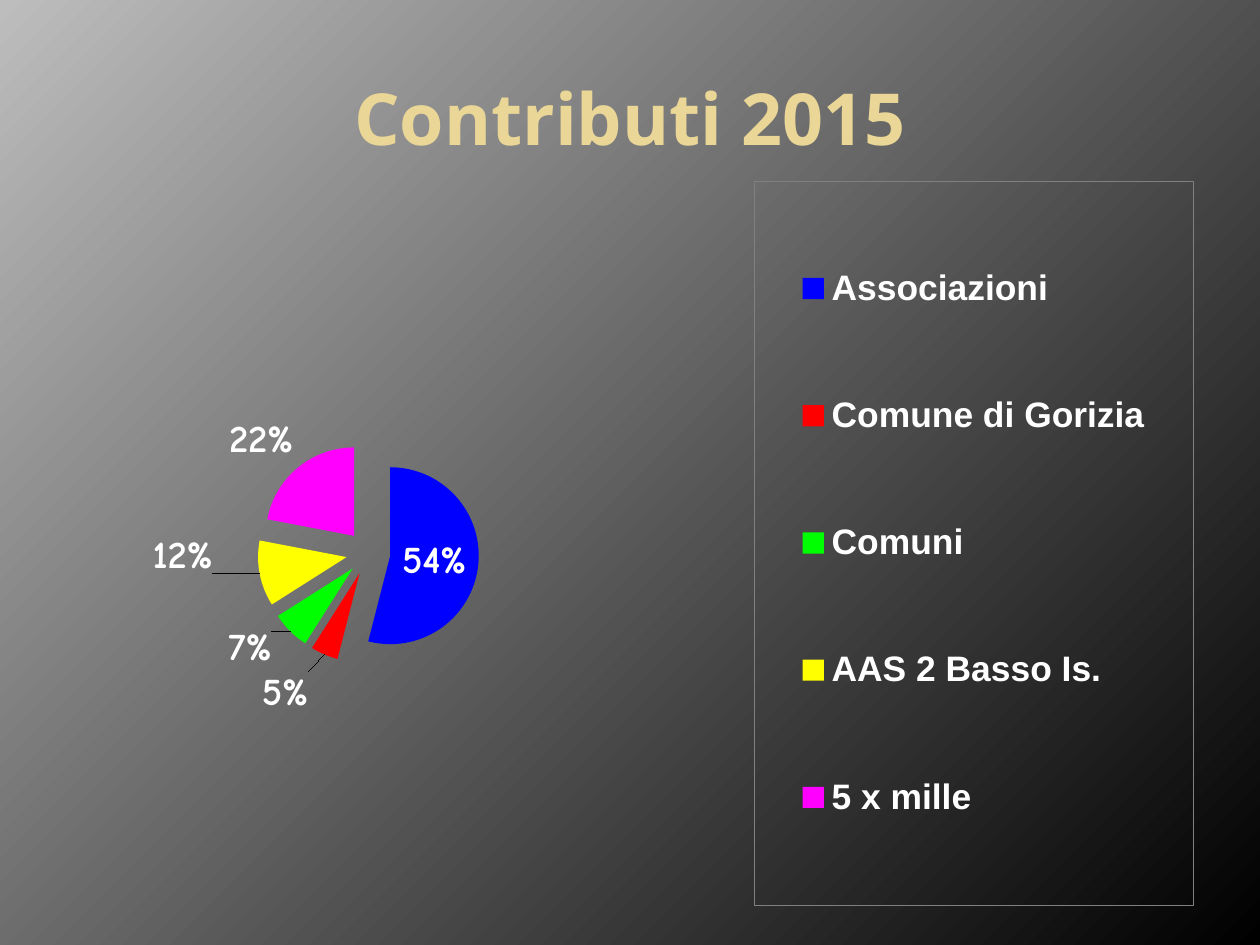
from typing import NamedTuple

from lxml.etree import SubElement
from pptx import Presentation
from pptx.chart.data import CategoryChartData
from pptx.dml.color import RGBColor
from pptx.enum.chart import XL_CHART_TYPE, XL_LABEL_POSITION, XL_LEGEND_POSITION
from pptx.enum.text import MSO_ANCHOR, PP_ALIGN
from pptx.oxml import parse_xml
from pptx.oxml.ns import nsdecls, qn
from pptx.util import Pt

HUES = {
    "light": "BDBDBD", "dark": "000000", "gold": "EAD696", "white": "FFFFFF",
    "blue": "0000FF", "red": "FF0000", "green": "00FF00",
    "yellow": "FFFF00", "pink": "FF00FF", "frame": "808080",
}


class Slice(NamedTuple):
    name: str
    value: int
    hue: str
    spot: XL_LABEL_POSITION
    shift: tuple[float, float] | None = None


OUT = XL_LABEL_POSITION.OUTSIDE_END
SLICES = [
    Slice("Associazioni", 54, "blue", XL_LABEL_POSITION.CENTER),
    Slice("Comune di Gorizia", 5, "red", OUT, (-0.01, 0.01)),
    Slice("Comuni", 7, "green", OUT, (-0.01, -0.01)),
    Slice("AAS 2 Basso Is.", 12, "yellow", OUT, (-0.03, -0.04)),
    Slice("5 x mille", 22, "pink", OUT),
]


def tint(name: str) -> RGBColor:
    return RGBColor.from_string(HUES[name])


def style(font, name: str, size: float, hue: str) -> None:
    font.name, font.size, font.bold = name, Pt(size), True
    font.color.rgb = tint(hue)


def layout(**parts):
    body = "".join(f'<c:{key} val="{val}"/>' for key, val in parts.items())
    return parse_xml(f'<c:layout {nsdecls("c")}><c:manualLayout>{body}'
                     '</c:manualLayout></c:layout>')


def frame(x: float, y: float, w: float, h: float, **mode):
    return layout(**mode, xMode="edge", yMode="edge", x=x, y=y, w=w, h=h)


def paint(slide) -> None:
    fill = slide.background.fill
    fill.gradient()
    fill.gradient_angle = 315
    for stop, name, place in zip(fill.gradient_stops, ("light", "dark"), (0, 1)):
        stop.color.rgb = tint(name)
        stop.position = place


def add_title(slide, text: str) -> None:
    box = slide.shapes.add_textbox(Pt(36), Pt(21.6), Pt(648), Pt(90)).text_frame
    box.word_wrap = True
    box.vertical_anchor = MSO_ANCHOR.MIDDLE
    para = box.paragraphs[0]
    para.text = text
    para.alignment = PP_ALIGN.CENTER
    style(para.font, "Noto Sans", 41, "gold")


def add_legend(chart) -> None:
    chart.has_legend = True
    legend = chart.legend
    legend.position = XL_LEGEND_POSITION.RIGHT
    legend.include_in_layout = False
    style(legend.font, "Arial", 20.2, "white")
    node = chart.element.find(f".//{qn('c:legend')}")
    for old in node.findall(qn("c:layout")):
        node.remove(old)
    node.find(qn("c:legendPos")).addnext(frame(0.6, 0.18, 0.33, 0.72))
    edge = parse_xml(
        f'<c:spPr {nsdecls("c", "a")}><a:noFill/><a:ln w="{Pt(0.5)}"><a:solidFill>'
        f'<a:srgbClr val="{HUES["frame"]}"/></a:solidFill></a:ln></c:spPr>')
    node.find(qn("c:txPr")).addprevious(edge)


def add_labels(chart) -> None:
    plot = chart.plots[0]
    points = plot.series[0].points
    for index, item in enumerate(SLICES):
        fill = points[index].format.fill
        fill.solid()
        fill.fore_color.rgb = tint(item.hue)
        points[index].format.line.fill.background()
        label = points[index].data_label
        style(label.font, "Comic Neue", 22, "white")
        label.position = item.spot
    for node, item in zip(chart.element.iter(qn("c:dLbl")), SLICES):
        node.find(qn("c:showVal")).set("val", "0")
        node.find(qn("c:showPercent")).set("val", "1")
        mark = node.find(qn("c:idx"))
        form = parse_xml(f'<c:numFmt {nsdecls("c")} formatCode="0%" sourceLinked="0"/>')
        mark.addnext(form)
        if item.shift:
            mark.addnext(layout(x=item.shift[0], y=item.shift[1]))
    group = chart.element.find(f".//{qn('c:ser')}/{qn('c:dLbls')}")
    lead = group.find(qn("c:showLeaderLines"))
    if lead is None:
        lead = SubElement(group, qn("c:showLeaderLines"))
    lead.set("val", "1")


def add_pie(slide) -> None:
    data = CategoryChartData()
    data.categories = [item.name for item in SLICES]
    data.add_series("Series 1", [item.value for item in SLICES])
    chart = slide.shapes.add_chart(
        XL_CHART_TYPE.PIE, Pt(-25.2), Pt(0), Pt(760.3), Pt(574.6), data).chart
    chart.has_title = False
    style(chart.font, "Arial", 22, "white")
    chart.plots[0].vary_by_categories = True
    add_labels(chart)
    add_legend(chart)
    area = chart.element.find(f".//{qn('c:plotArea')}")
    for old in area.findall(qn("c:layout")):
        area.remove(old)
    area.insert(0, frame(0.16, 0.44, 0.3, 0.22, layoutTarget="inner"))
    burst = parse_xml(f'<c:explosion {nsdecls("c")} val="25"/>')
    area.find(f".//{qn('c:dPt')}").addprevious(burst)


def main() -> None:
    deck = Presentation()
    deck.slide_width, deck.slide_height = Pt(720), Pt(540)
    slide = deck.slides.add_slide(deck.slide_layouts[6])
    paint(slide)
    add_title(slide, "Contributi 2015")
    add_pie(slide)
    deck.save("out.pptx")


if __name__ == "__main__":
    main()
